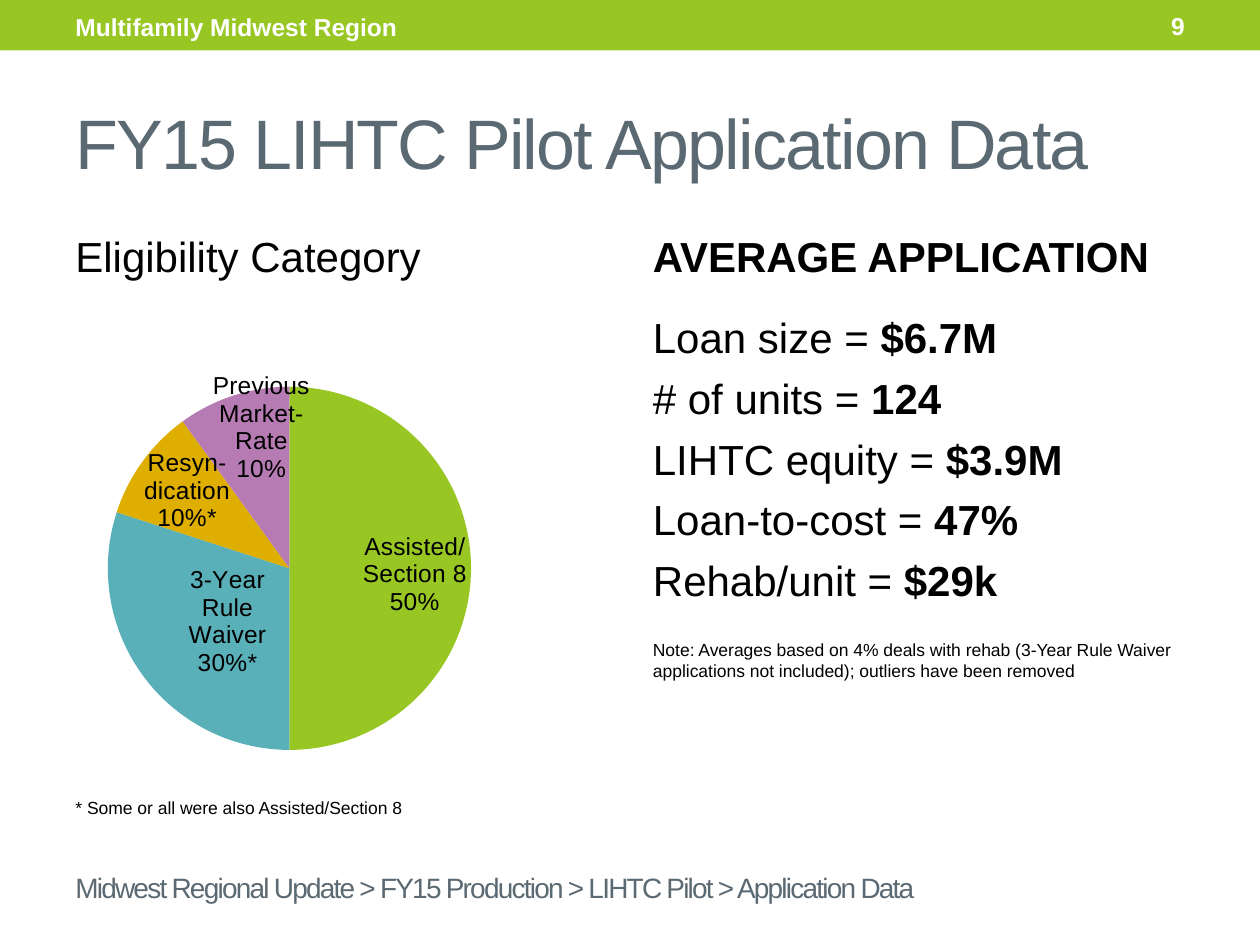
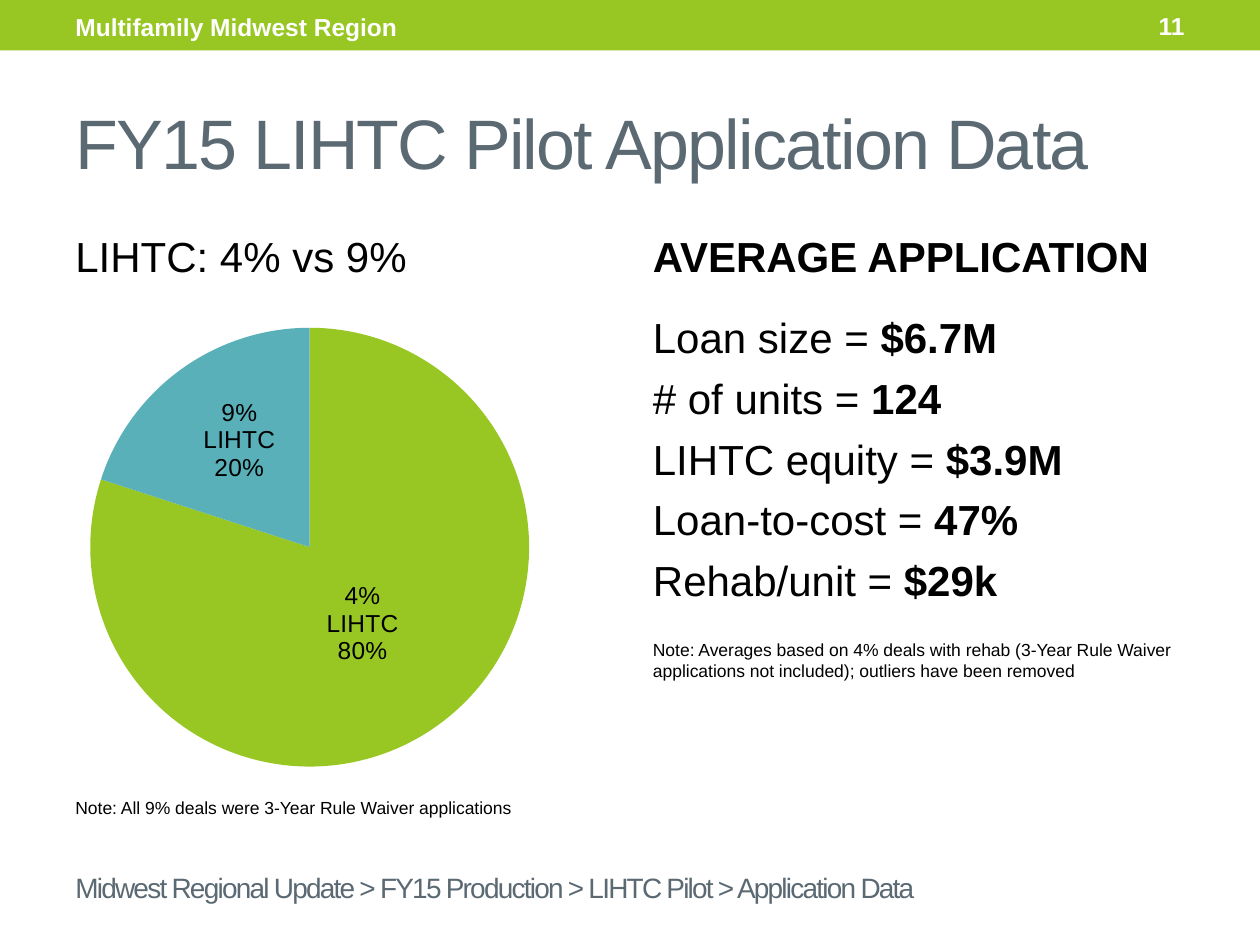
import dataclasses
import typing

import lxml.etree
import pptx
import pptx.chart.data
import pptx.dml.color
import pptx.enum.chart
import pptx.enum.shapes
import pptx.enum.text
import pptx.oxml.ns
import pptx.util

Pt = pptx.util.Pt
ALIGN = pptx.enum.text.PP_ALIGN
ANCHOR = pptx.enum.text.MSO_ANCHOR

FONT = "Arial"
COLORS = {
    "green": "98C723",
    "teal": "59B0B9",
    "gold": "DEAE00",
    "purple": "B77BB4",
    "slate": "5B6973",
    "white": "FFFFFF",
    "black": "000000",
}


# Data model
class Box(typing.NamedTuple):
    left: float
    top: float
    width: float
    height: float


@dataclasses.dataclass
class Style:
    size: float
    color: str = "black"
    bold: bool = False
    tracking: float = 0


@dataclasses.dataclass
class Line:
    runs: list[tuple[str, Style]]
    space_before: float = 0


@dataclasses.dataclass
class Slice:
    category: str
    value: int
    color: str
    label: str
    shift: tuple[float, float]  # label offset as fractions of the chart


@dataclasses.dataclass
class DataSlide:
    number: int
    heading: str
    footnote: str
    plot: Box  # plot area as fractions of the chart
    slices: list[Slice]


# Shared styles and places
HEADER = Style(14, "white", bold=True)
TITLE = Style(40, "slate", tracking=-1)
TRAIL = Style(16, "slate", tracking=-1)
BODY = Style(24)
STRONG = Style(24, bold=True)
NOTE = Style(10)
LABEL = Style(14)

BAND_BOX = Box(0, 0, 720, 28.8)
REGION_BOX = Box(36, 2, 324, 26)
NUMBER_BOX = Box(600, 1.5, 84, 26)
TITLE_BOX = Box(36, 42, 648, 78)
TRAIL_BOX = Box(36, 492, 648, 30)
HEADING_BOX = Box(36, 128, 306, 36)
FOOTNOTE_BOX = Box(36, 452, 306, 20)
AVERAGES_BOX = Box(366, 128, 342, 400)
CHART_BOX = Box(12, 138, 330, 346)

AVERAGES = [
    ("Loan size", "$6.7M"),
    ("# of units", "124"),
    ("LIHTC equity", "$3.9M"),
    ("Loan-to-cost", "47%"),
    ("Rehab/unit", "$29k"),
]
AVERAGES_NOTE = (
    "Note: Averages based on 4% deals with rehab (3-Year Rule Waiver "
    "applications not included); outliers have been removed"
)

SLIDES = [
    DataSlide(
        9, "Eligibility Category", "* Some or all were also Assisted/Section 8",
        Box(0.15, 0.24, 0.63, 0.6),
        [
            Slice("Assisted/Section 8", 50, "green", "Assisted/\nSection 8\n50%", (0.06, 0.01)),
            Slice("3-Year Rule Waiver", 30, "teal", "3-Year\nRule\nWaiver\n30%*", (0.02, 0)),
            Slice("Resyndication", 10, "gold", "Resyn-\ndication\n10%*", (-0.05, -0.04)),
            Slice("Previous Market-Rate", 10, "purple",
                  "Previous\nMarket-\nRate\n10%", (0, -0.09)),
        ],
    ),
    DataSlide(
        11, "LIHTC: 4% vs 9%", "Note: All 9% deals were 3-Year Rule Waiver applications",
        Box(0.12, 0.14, 0.76, 0.73),
        [
            Slice("4% LIHTC", 80, "green", "4%\nLIHTC\n80%", (-0.02, -0.02)),
            Slice("9% LIHTC", 20, "teal", "9%\nLIHTC\n20%", (-0.01, -0.03)),
        ],
    ),
]


# Helpers
def rgb(name: str) -> pptx.dml.color.RGBColor:
    return pptx.dml.color.RGBColor.from_string(COLORS[name])


def points(box: Box) -> list[pptx.util.Length]:
    return [Pt(length) for length in box]


def set_font(font, style: Style) -> None:
    values = {"name": FONT, "size": Pt(style.size), "bold": style.bold}
    for attribute, value in values.items():
        setattr(font, attribute, value)
    font.color.rgb = rgb(style.color)


def add_run(paragraph, text: str, style: Style) -> None:
    run = paragraph.add_run()
    run.text = text
    set_font(run.font, style)
    if style.tracking:
        run.font._element.set("spc", str(int(style.tracking * 100)))


def add_text(slide, box: Box, lines: list[Line], anchor=ANCHOR.TOP, align=ALIGN.LEFT) -> None:
    frame = slide.shapes.add_textbox(*points(box)).text_frame
    frame.word_wrap = True
    frame.vertical_anchor = anchor
    for index, line in enumerate(lines):
        paragraph = frame.add_paragraph() if index else frame.paragraphs[0]
        paragraph.alignment = align
        paragraph.space_before = Pt(line.space_before)
        for text, style in line.runs:
            add_run(paragraph, text, style)


def set_layout(parent, position: int, values: dict[str, typing.Any]) -> None:
    """Give a chart element a manual layout."""
    for old in parent.findall(pptx.oxml.ns.qn("c:layout")):
        parent.remove(old)
    layout = lxml.etree.Element(pptx.oxml.ns.qn("c:layout"))
    manual = lxml.etree.SubElement(layout, pptx.oxml.ns.qn("c:manualLayout"))
    for tag, value in values.items():
        lxml.etree.SubElement(manual, pptx.oxml.ns.qn(f"c:{tag}")).set("val", str(value))
    parent.insert(position, layout)


# Parts of a slide
def add_frame(slide, number: int) -> None:
    band = slide.shapes.add_shape(pptx.enum.shapes.MSO_SHAPE.RECTANGLE, *points(BAND_BOX))
    band.shadow.inherit = False
    band.fill.solid()
    band.fill.fore_color.rgb = rgb("green")
    band.line.fill.background()
    for box, text, style, align in [
        (REGION_BOX, "Multifamily Midwest Region", HEADER, ALIGN.LEFT),
        (NUMBER_BOX, str(number), HEADER, ALIGN.RIGHT),
        (TITLE_BOX, "FY15 LIHTC Pilot Application Data", TITLE, ALIGN.LEFT),
        (TRAIL_BOX, "Midwest Regional Update > FY15 Production > LIHTC Pilot > Application Data",
         TRAIL, ALIGN.LEFT),
    ]:
        add_text(slide, box, [Line([(text, style)])], ANCHOR.MIDDLE, align)


def add_pie(slide, plot_box: Box, slices: list[Slice]) -> None:
    data = pptx.chart.data.CategoryChartData()
    data.categories = [item.category for item in slices]
    data.add_series("Series 1", [item.value for item in slices])
    chart = slide.shapes.add_chart(
        pptx.enum.chart.XL_CHART_TYPE.PIE, *points(CHART_BOX), data
    ).chart
    chart.has_title = False
    chart.has_legend = False
    set_font(chart.font, Style(18))
    plot = chart.plots[0]
    plot.vary_by_categories = True
    sides = dict(zip("xywh", plot_box))
    set_layout(chart._chartSpace.chart.plotArea, 0,
               {"layoutTarget": "inner", "xMode": "edge", "yMode": "edge", **sides})

    for index, item in enumerate(slices):
        point = plot.series[0].points[index]
        point.format.fill.solid()
        point.format.fill.fore_color.rgb = rgb(item.color)
        point.format.line.fill.background()
        label = point.data_label
        frame = label.text_frame
        for row, text in enumerate(item.label.split("\n")):
            paragraph = frame.add_paragraph() if row else frame.paragraphs[0]
            add_run(paragraph, text, LABEL)
        label.position = pptx.enum.chart.XL_LABEL_POSITION.CENTER
        set_layout(label._dLbl, 1, dict(zip("xy", item.shift)))


def add_averages(slide) -> None:
    lines = [Line([("AVERAGE APPLICATION", STRONG)])]
    for index, (name, value) in enumerate(AVERAGES):
        lines.append(Line([(f"{name} = ", BODY), (value, STRONG)], 6 if index else 17.5))
    lines.append(Line([(AVERAGES_NOTE, NOTE)], 19))
    add_text(slide, AVERAGES_BOX, lines)


def main() -> None:
    presentation = pptx.Presentation()
    presentation.slide_width, presentation.slide_height = Pt(720), Pt(540)
    for content in SLIDES:
        slide = presentation.slides.add_slide(presentation.slide_layouts[6])
        add_frame(slide, content.number)
        add_pie(slide, content.plot, content.slices)
        add_text(slide, HEADING_BOX, [Line([(content.heading, BODY)])])
        add_text(slide, FOOTNOTE_BOX, [Line([(content.footnote, NOTE)])])
        add_averages(slide)
    presentation.save("out.pptx")


if __name__ == "__main__":
    main()
